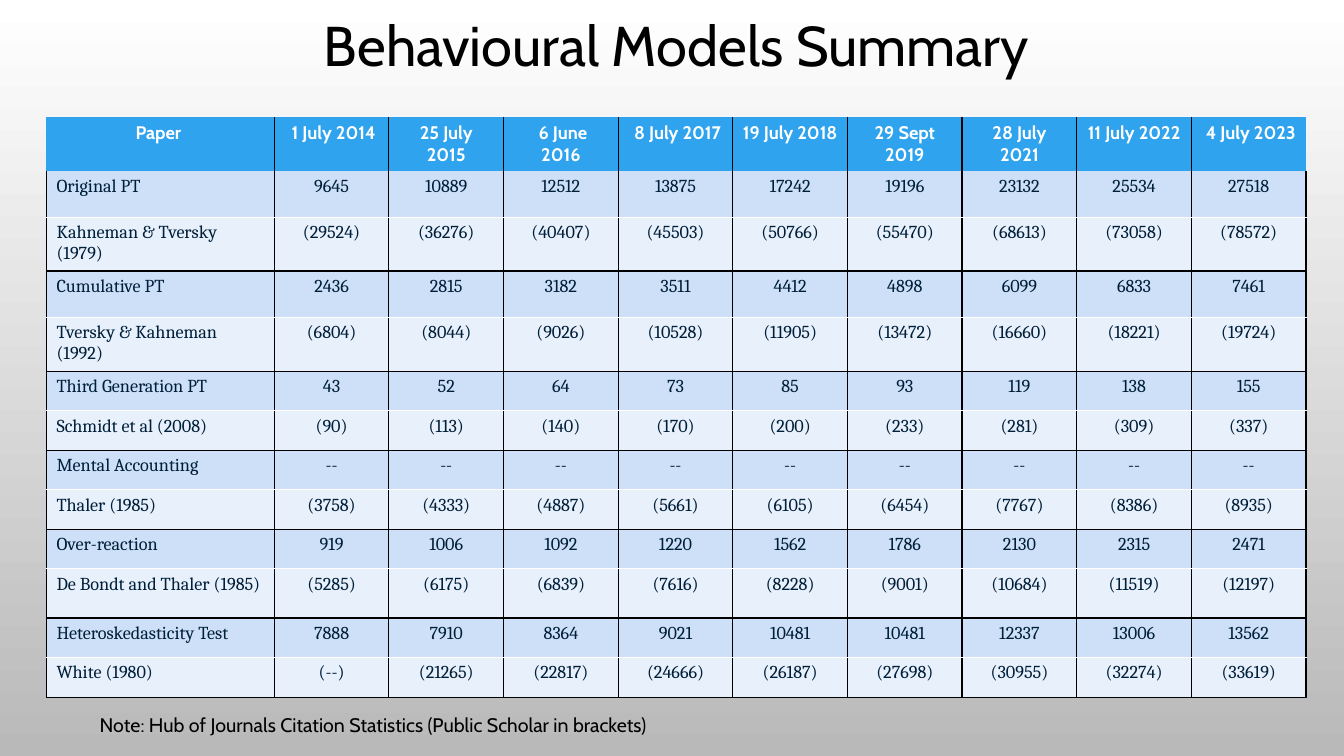
import pptx
import pptx.dml.color
import pptx.enum.text
import pptx.oxml
import pptx.oxml.ns
import pptx.util

ALIGN = pptx.enum.text.PP_ALIGN
ANCHOR = pptx.enum.text.MSO_ANCHOR
BLACK, WHITE, NAVY = "000000", "FFFFFF", "001F39"
HEADER_FILL, COUNT_FILL, BRACKET_FILL = "2FA3EE", "CDE0F8", "E8F0FC"


def colour(code):
    return pptx.dml.color.RGBColor.from_string(code)


class SummarySlide:
    """Holds the fonts and the current page; lengths are percentages of the page."""

    heading_font, body_font = "Cabin", "Cambria"

    def __init__(self, deck):
        self.deck = deck
        self.page = deck.slides.add_slide(deck.slide_layouts[6])

    def across(self, share):
        return int(self.deck.slide_width * share / 100)

    def down(self, share):
        return int(self.deck.slide_height * share / 100)

    def frame(self, left, top, width, height):
        return self.across(left), self.down(top), self.across(width), self.down(height)

    def background(self, top_code, bottom_code):
        fill = self.page.background.fill
        fill.gradient()
        fill.gradient_angle = 270
        for stop, code, position in zip(fill.gradient_stops, (top_code, bottom_code), (0, 1)):
            stop.color.rgb = colour(code)
            stop.position = position

    def paragraph(self, para, text, size, font, code, align=ALIGN.LEFT, bold=False):
        para.text = text
        para.alignment = align
        para.font.size = pptx.util.Pt(size)
        para.font.name = font
        para.font.bold = bold
        para.font.color.rgb = colour(code)

    def text(self, place, text, size, align=ALIGN.LEFT, anchor=ANCHOR.TOP):
        box = self.page.shapes.add_textbox(*self.frame(*place))
        box.text_frame.word_wrap = True
        box.text_frame.vertical_anchor = anchor
        self.paragraph(box.text_frame.paragraphs[0], text, size, self.heading_font, BLACK, align)

    def borders(self, cell, edges):
        """Draw left, right, top and bottom edges; None leaves an edge bare."""
        properties = cell._tc.get_or_add_tcPr()
        for index, (side, code) in enumerate(zip("LRTB", edges)):
            paint = f'<a:solidFill><a:srgbClr val="{code}"/></a:solidFill>' if code else "<a:noFill/>"
            line = f'<a:ln{side} {pptx.oxml.ns.nsdecls("a")} w="12700">{paint}</a:ln{side}>'
            properties.insert(index, pptx.oxml.parse_xml(line))

    def table(self, left, top, columns, heights, rows):
        place = self.frame(left, top, sum(columns), sum(heights))
        grid = self.page.shapes.add_table(len(rows), len(columns), *place).table
        for column, width in zip(grid.columns, columns):
            column.width = self.across(width)
        for row, height in zip(grid.rows, heights):
            row.height = self.down(height)
        for r, values in enumerate(rows):
            for c, value in enumerate(values):
                self.cell(grid.cell(r, c), r, c, value, len(columns) - 1)

    def cell(self, cell, r, c, value, last):
        para = cell.text_frame.paragraphs[0]
        cell.fill.solid()
        if r == 0:
            cell.fill.fore_color.rgb = colour(HEADER_FILL)
            self.paragraph(para, value, 13, self.heading_font, WHITE, ALIGN.CENTER, True)
            edges = (BLACK if c else None, BLACK if c < last else None, None, None)
        else:
            counts = r % 2 == 1
            cell.fill.fore_color.rgb = colour(COUNT_FILL if counts else BRACKET_FILL)
            align = ALIGN.CENTER if c else ALIGN.LEFT
            self.paragraph(para, value, 13, self.body_font, NAVY, align)
            above = None if r == 1 else BLACK
            edges = (BLACK, BLACK) + ((above, WHITE) if counts else (WHITE, BLACK))
        self.borders(cell, edges)


DATES = ["Paper ", " 1 July 2014", "25 July 2015", " 6 June 2016", " 8 July 2017", "19 July 2018",
         "29 Sept 2019", "28 July 2021", "11 July 2022", " 4 July 2023"]

# Model, its paper, citation counts, counts shown in brackets
MODELS = [
    ("Original PT", "Kahneman & Tversky (1979)",
     "9645 10889 12512 13875 17242 19196 23132 25534 27518",
     "29524 36276 40407 45503 50766 55470 68613 73058 78572"),
    ("Cumulative PT", "Tversky & Kahneman (1992)",
     "2436 2815 3182 3511 4412 4898 6099 6833 7461",
     "6804 8044 9026 10528 11905 13472 16660 18221 19724"),
    ("Third Generation PT", "Schmidt et al (2008)",
     "43 52 64 73 85 93 119 138 155",
     "90 113 140 170 200 233 281 309 337"),
    ("Mental Accounting", "Thaler (1985)",
     "-- -- -- -- -- -- -- -- --",
     "3758 4333 4887 5661 6105 6454 7767 8386 8935"),
    ("Over-reaction", "De Bondt and Thaler (1985)",
     "919 1006 1092 1220 1562 1786 2130 2315 2471",
     "5285 6175 6839 7616 8228 9001 10684 11519 12197"),
    ("Heteroskedasticity Test", "White (1980)",
     "7888 7910 8364 9021 10481 10481 12337 13006 13562",
     "-- 21265 22817 24666 26187 27698 30955 32274 33619"),
]


def main():
    deck = pptx.Presentation()
    deck.slide_width = pptx.util.Inches(13.33)
    deck.slide_height = pptx.util.Inches(7.5)
    summary = SummarySlide(deck)
    summary.background(WHITE, "B9B9B9")

    # Note and title
    summary.text((6.68, 93.6, 62, 4.5),
                 "Note: Hub of Journals Citation Statistics (Public Scholar in brackets)", 14)
    summary.text((16.95, -0.4, 66.77, 12.53), "Behavioural Models Summary", 40,
                 ALIGN.CENTER, ANCHOR.MIDDLE)

    # Citation table: two rows for each model
    rows = [DATES]
    for model, paper, counts, bracketed in MODELS:
        rows.append([model] + counts.split())
        rows.append([paper] + [f"({count})" for count in bracketed.split()])
    tall, medium, low = 6.53, 6.13, 5.23
    heights = [tall] + [medium, tall] * 2 + [low] * 5 + [tall] + [low] * 2
    summary.table(3.46, 15.47, [16.95] + [8.53] * 9, heights, rows)

    deck.save("out.pptx")


if __name__ == "__main__":
    main()
